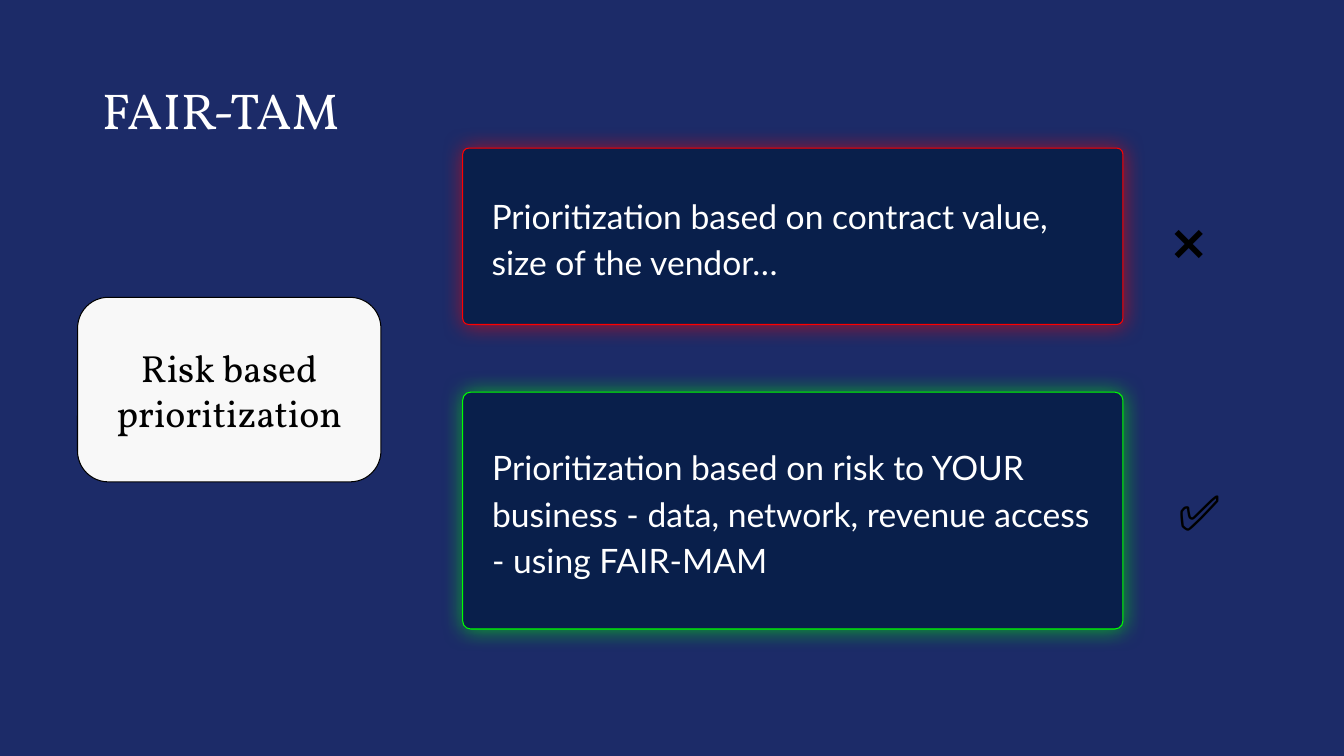
import pptx
import pptx.util
import pptx.dml.color
import pptx.enum.shapes
import pptx.enum.text
import lxml.etree

Pt = pptx.util.Pt
Kind = pptx.enum.shapes.MSO_SHAPE
Anchor = pptx.enum.text.MSO_ANCHOR
Align = pptx.enum.text.PP_ALIGN
NS = "http://schemas.openxmlformats.org/drawingml/2006/main"

NAVY, DEEP, PALE = "1C2B68", "091F4B", "F8F8F8"
WHITE, BLACK = "FFFFFF", "000000"
LEFT, WIDE = 330.5, 471.6
GLOW, FADE = 15.8, 60

title = ("FAIR-TAM", (66.2, 28.8, 828, 104.4))
topic = ("Risk based prioritization", (55.4, 212.4, 216.7, 131.8))
cards = [
    ("Prioritization based on contract value, size of the vendor…", 105.8, 126, "FF0000"),
    ("Prioritization based on risk to YOUR business - data, network, "
     "revenue access - using FAIR-MAM", 280.1, 169.2, "00FF00"),
]
marks = [
    ("❌", (828, 142.6, 57.6, 61.9), Anchor.TOP, Align.LEFT),
    ("✅", (828, 334.1, 57.6, 61.2), Anchor.MIDDLE, Align.CENTER),
]


def paint(target, color):
    if hasattr(target, "solid"):
        target.solid()
        target = target.fore_color
    target.rgb = pptx.dml.color.RGBColor.from_string(color)


def write(shape, text, size, face, color, pad, anchor=Anchor.MIDDLE,
          align=Align.LEFT, lead=1.0, after=0):
    frame = shape.text_frame
    frame.word_wrap = True
    frame.vertical_anchor = anchor
    frame.margin_left = frame.margin_right = Pt(pad[0])
    frame.margin_top = frame.margin_bottom = Pt(pad[1])
    para = frame.paragraphs[0]
    para.alignment = align
    para.line_spacing = lead
    para.space_after = Pt(after)
    run = para.add_run()
    run.text = text
    run.font.size = Pt(size)
    run.font.name = face
    paint(run.font.color, color)


def panel(box, fill, edge, curve):
    shape = slide.shapes.add_shape(Kind.ROUNDED_RECTANGLE, *map(Pt, box))
    shape.adjustments[0] = curve
    shape.shadow.inherit = False
    paint(shape.fill, fill)
    paint(shape.line.fill, edge)
    shape.line.width = Pt(0.75)
    return shape


def glow(shape, color):
    effect = shape.element.spPr.find(f"{{{NS}}}effectLst")
    shade = lxml.etree.SubElement(effect, f"{{{NS}}}outerShdw", blurRad=str(Pt(GLOW)),
                                  dist="0", dir="0", algn="ctr", rotWithShape="0")
    tint = lxml.etree.SubElement(shade, f"{{{NS}}}srgbClr", val=color)
    lxml.etree.SubElement(tint, f"{{{NS}}}alpha", val=str(FADE * 1000))


deck = pptx.Presentation()
deck.slide_width, deck.slide_height = Pt(960), Pt(540)
slide = deck.slides.add_slide(deck.slide_layouts[6])
paint(slide.background.fill, NAVY)

text, box = title
head = slide.shapes.add_textbox(*map(Pt, box))
write(head, text, 36, "Vollkorn", WHITE, (7.2, 3.6), lead=0.9)

for text, top, high, edge in cards:
    card = panel((LEFT, top, WIDE, high), DEEP, edge, 0.034)
    glow(card, edge)
    write(card, text, 24, "Lato", WHITE, (19.4, 19.4), lead=1.15, after=13)

text, box = topic
write(panel(box, PALE, BLACK, 0.167), text, 27, "Vollkorn", BLACK, (9.4, 9.4),
      align=Align.CENTER)

for text, box, anchor, align in marks:
    mark = slide.shapes.add_textbox(*map(Pt, box))
    write(mark, text, 35, "Lato", BLACK, (9.4, 9.4), anchor, align)

deck.save("out.pptx")
